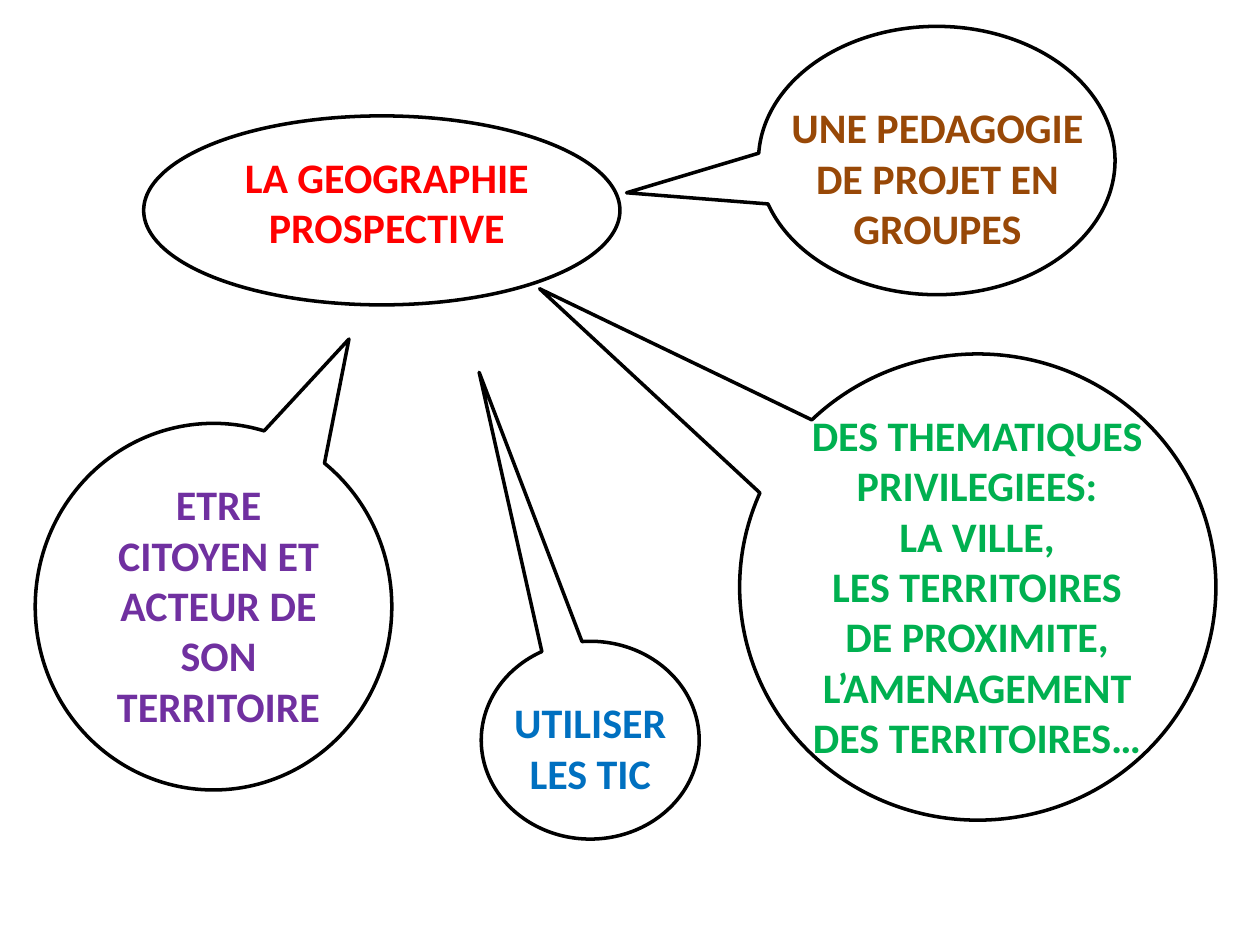
import dataclasses

import pptx
import pptx.dml.color
import pptx.enum.shapes
import pptx.enum.text
import pptx.util

Inches = pptx.util.Inches
RGBColor = pptx.dml.color.RGBColor
Shapes = pptx.enum.shapes.MSO_SHAPE


@dataclasses.dataclass(frozen=True)
class Theme:
    """Colours, font and sizes of the slide."""

    font: str = "Calibri"
    text_size: int = 24
    outline_width: int = 2
    outline: str = "000000"
    red: str = "FF0000"
    blue: str = "0070C0"
    purple: str = "7030A0"
    brown: str = "984807"
    green: str = "00B050"


THEME = Theme()

LABELS = [
    ((1.77, 1.15, 2.6, 0.91), THEME.red, ["LA GEOGRAPHIE PROSPECTIVE"]),
    ((3.82, 5.48, 1.73, 0.91), THEME.blue, ["UTILISER LES TIC"]),
    ((0.75, 3.75, 1.97, 2.12), THEME.purple,
     ["ETRE CITOYEN ET ACTEUR DE SON TERRITOIRE"]),
    ((6.18, 0.76, 2.52, 1.31), THEME.brown,
     ["UNE PEDAGOGIE DE PROJET EN GROUPES"]),
    ((6.34, 3.2, 2.83, 2.93), THEME.green,
     ["DES THEMATIQUES PRIVILEGIEES:", "LA VILLE,",
      "LES TERRITOIRES DE PROXIMITE, L’AMENAGEMENT DES TERRITOIRES…"]),
]

CENTRAL_BUBBLE = (1.14, 0.92, 3.78, 1.5)

CALLOUTS = [
    ((6.02, 0.21, 2.83, 2.13), (-0.87, 0.12)),
    ((5.87, 2.81, 3.78, 3.7), (-0.92, -0.64)),
    ((3.82, 5.09, 1.73, 1.57), (-0.51, -1.86)),
    ((0.28, 3.36, 2.83, 2.91), (0.38, -0.73)),
]


def add_label(page, box, colour, lines):
    """Write centred bold lines in the given box."""
    label = page.shapes.add_textbox(*map(Inches, box))
    frame = label.text_frame
    frame.word_wrap = True
    frame.auto_size = pptx.enum.text.MSO_AUTO_SIZE.SHAPE_TO_FIT_TEXT
    frame.text = "\n".join(lines)
    for para in frame.paragraphs:
        para.alignment = pptx.enum.text.PP_ALIGN.CENTER
        for span in para.runs:
            span.font.name = THEME.font
            span.font.size = pptx.util.Pt(THEME.text_size)
            span.font.bold = True
            span.font.color.rgb = RGBColor.from_string(colour)


def add_bubble(page, box, kind, tail=()):
    """Outline an unfilled bubble, its tail tip given relative to its centre."""
    bubble = page.shapes.add_shape(kind, *map(Inches, box))
    for index, offset in enumerate(tail):
        bubble.adjustments[index] = offset
    bubble.shadow.inherit = False
    bubble.fill.background()
    bubble.line.color.rgb = RGBColor.from_string(THEME.outline)
    bubble.line.width = pptx.util.Pt(THEME.outline_width)


def build_mind_map(page):
    """Place the labels, the central bubble and the callouts pointing to it."""
    for box, colour, lines in LABELS:
        add_label(page, box, colour, lines)
    add_bubble(page, CENTRAL_BUBBLE, Shapes.OVAL)
    for box, tail in CALLOUTS:
        add_bubble(page, box, Shapes.OVAL_CALLOUT, tail)


def main():
    """Build the deck and save it."""
    deck = pptx.Presentation()
    deck.slide_width = Inches(10)
    deck.slide_height = Inches(7.5)
    build_mind_map(deck.slides.add_slide(deck.slide_layouts[6]))
    deck.save("out.pptx")


if __name__ == "__main__":
    main()
